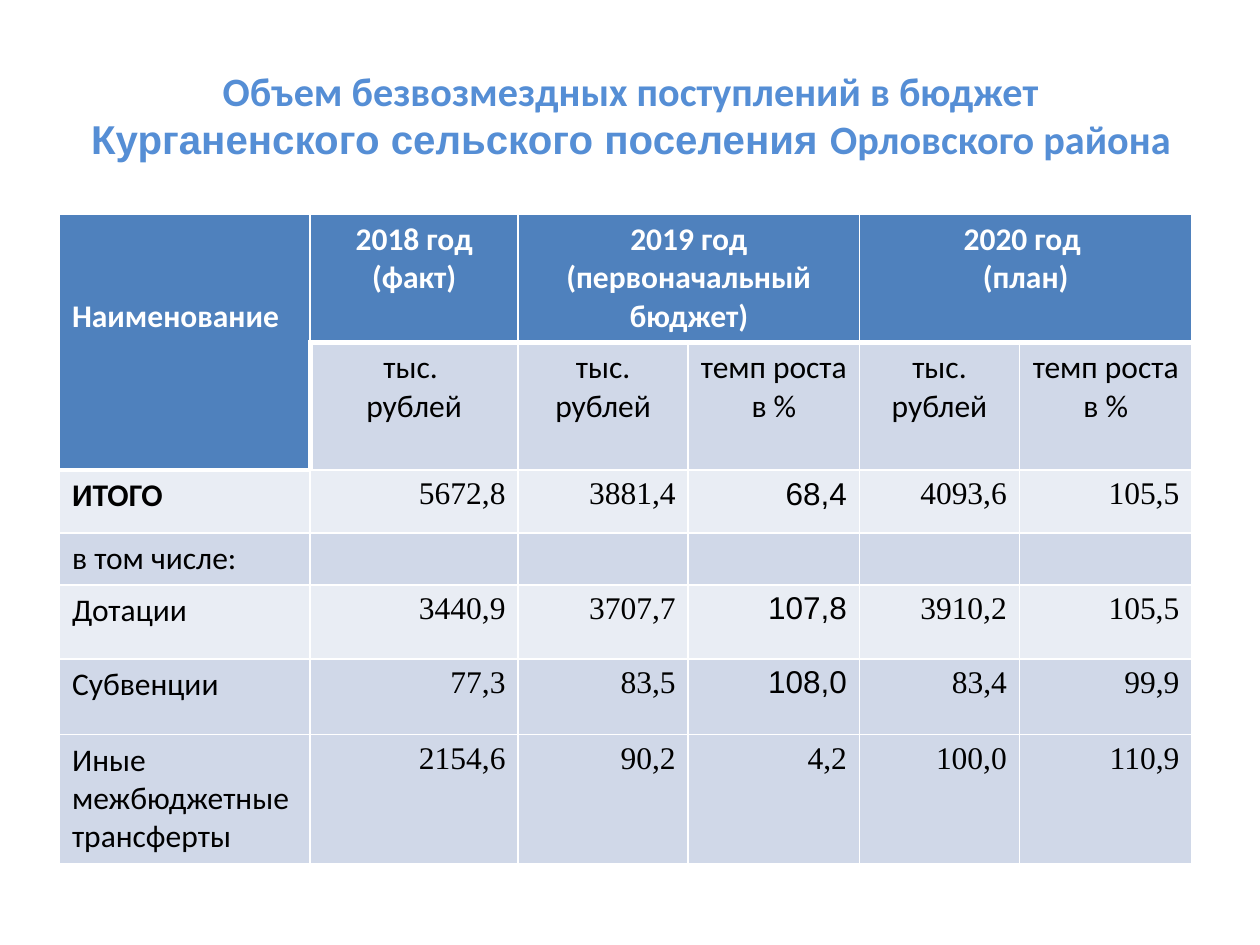
from lxml.etree import SubElement
from pptx import Presentation
from pptx.dml.color import RGBColor
from pptx.enum.text import MSO_ANCHOR, MSO_AUTO_SIZE, PP_ALIGN
from pptx.oxml.ns import qn
from pptx.util import Pt

BLUE, BAND, PALE, WHITE, BLACK = "4F81BD", "D0D8E8", "E9EDF4", "FFFFFF", "000000"
SANS, SERIF, ARIAL = "Calibri", "Times New Roman", "Arial"
COLS = [143.3, 118.8, 97.2, 97.9, 91.4, 98.6]
ROWS = [73.2, 69.7, 36, 29.5, 42.5, 43.2, 74]
HEADS = [(0, "Наименование"), (1, "2018 год (факт)"),
         (2, "2019 год (первоначальный бюджет)"), (4, "2020 год \n(план)")]
UNITS = ["тыс. \nрублей", "тыс. рублей", "темп роста в %", "тыс. рублей", "темп роста в %"]
DATA = [
    ("ИТОГО", PALE, ["5672,8", "3881,4", "68,4", "4093,6", "105,5"]),
    ("в том числе:", BAND, []),
    ("Дотации", PALE, ["3440,9", "3707,7", "107,8", "3910,2", "105,5"]),
    ("Субвенции", BAND, ["77,3", "83,5", "108,0", "83,4", "99,9"]),
    ("Иные межбюджетные трансферты", BAND, ["2154,6", "90,2", "4,2", "100,0", "110,9"]),
]
MERGES = [(0, 0, 1, 0), (0, 2, 0, 3), (0, 4, 0, 5)]
THICK = {(0, c): "B" for c in range(1, 6)} | {(1, c): "T" for c in range(2, 6)}
THICK |= {(1, 0): "RB", (0, 0): "B", (1, 1): "LT", (2, 0): "T"}


def rgb(value):
    """Turn a hex string into a colour."""
    return RGBColor.from_string(value)


def add_run(p, text, font=SANS, size=18, color=BLACK, bold=False):
    """Append one formatted run to a paragraph."""
    r = p.add_run()
    r.text = text
    r.font.name, r.font.size, r.font.bold = font, Pt(size), bold
    r.font.color.rgb = rgb(color)


class Deck:
    """Hold the presentation, its current slide and the drawing methods."""

    def __init__(self, width, height):
        """Start a deck with one title-only slide."""
        self.prs = Presentation()
        self.prs.slide_width, self.prs.slide_height = Pt(width), Pt(height)
        self.s = self.prs.slides.add_slide(self.prs.slide_layouts[5])

    def title(self, box, lines, **style):
        """Fill the title placeholder with lines of (text, font) runs."""
        sp = self.s.shapes.title
        sp.left, sp.top, sp.width, sp.height = map(Pt, box)
        tf = sp.text_frame
        tf.word_wrap, tf.auto_size = True, MSO_AUTO_SIZE.NONE
        tf.vertical_anchor = MSO_ANCHOR.MIDDLE
        p = tf.paragraphs[0]
        p.alignment = PP_ALIGN.CENTER
        for i, line in enumerate(lines):
            if i:
                p.add_line_break()
            for text, font in line:
                add_run(p, text, font=font, **style)

    def table(self, left, top, cols, rows):
        """Add a plain table with the given column widths and row heights."""
        frame = self.s.shapes.add_table(len(rows), len(cols), Pt(left), Pt(top),
                                        Pt(sum(cols)), Pt(sum(rows)))
        tbl = frame.table
        tbl.first_row = tbl.horz_banding = False
        for col, width in zip(tbl.columns, cols):
            col.width = Pt(width)
        for row, height in zip(tbl.rows, rows):
            row.height = Pt(height)
        return tbl

    def borders(self, cell, thick=""):
        """Draw white cell borders, heavier on the sides named in thick."""
        tc_pr = cell._tc.get_or_add_tcPr()
        for side in "LRTB":
            ln = SubElement(tc_pr, qn(f"a:ln{side}"), w=str(Pt(3 if side in thick else 1)))
            SubElement(SubElement(ln, qn("a:solidFill")), qn("a:srgbClr"), val=WHITE)

    def fill(self, cell, color):
        """Give a cell a solid fill."""
        cell.fill.solid()
        cell.fill.fore_color.rgb = rgb(color)

    def cell_text(self, cell, text, align=PP_ALIGN.LEFT, **style):
        """Put text into a cell, one paragraph per line."""
        tf = cell.text_frame
        for i, line in enumerate(text.split("\n")):
            p = tf.add_paragraph() if i else tf.paragraphs[0]
            p.alignment = align
            add_run(p, line, **style)


def main():
    """Build the budget slide."""
    deck = Deck(720, 540)
    deck.title((36.7, 25.9, 648, 79.2),
               [[("Объем безвозмездных поступлений в бюджет", SANS)],
                [("Курганенского сельского поселения ", ARIAL), ("Орловского района", SANS)]],
               size=23, color="558ED5", bold=True)

    tbl = deck.table(34, 122.4, COLS, ROWS)
    fills = [BLUE, BAND] + [color for _, color, _ in DATA]
    for r, color in enumerate(fills):
        for c in range(len(COLS)):
            cell = tbl.cell(r, c)
            deck.borders(cell, THICK.get((r, c), ""))
            deck.fill(cell, BLUE if (r, c) == (1, 0) else color)
    for r1, c1, r2, c2 in MERGES:
        tbl.cell(r1, c1).merge(tbl.cell(r2, c2))

    for c, text in HEADS:
        deck.cell_text(tbl.cell(0, c), text, PP_ALIGN.CENTER if c else PP_ALIGN.LEFT,
                       color=WHITE, bold=True)
    tbl.cell(0, 0).margin_top = Pt(47.5)
    for c, text in enumerate(UNITS, 1):
        deck.cell_text(tbl.cell(1, c), text, PP_ALIGN.CENTER)
    for r, (name, _, values) in enumerate(DATA, 2):
        deck.cell_text(tbl.cell(r, 0), name, bold=r == 2)
        for c, value in enumerate(values, 1):
            font = ARIAL if c == 3 and r < 6 else SERIF
            deck.cell_text(tbl.cell(r, c), value, PP_ALIGN.RIGHT, font=font)

    deck.prs.save("out.pptx")


if __name__ == "__main__":
    main()
